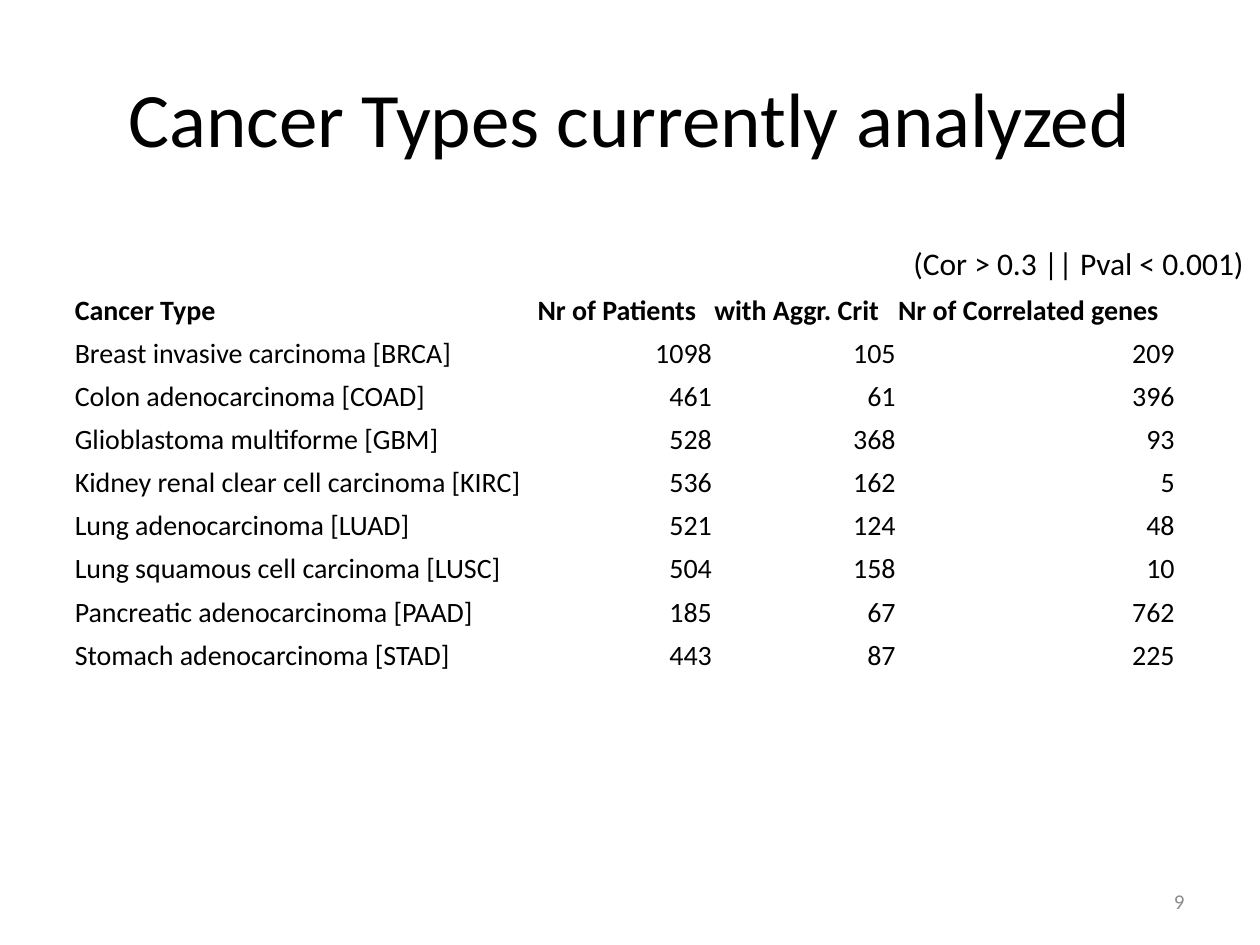
"""Build a slide with a table of the cancer types currently analyzed."""
import dataclasses

import pptx
import pptx.dml.color
import pptx.enum.text
import pptx.util

Pt = pptx.util.Pt
Align = pptx.enum.text.PP_ALIGN
Anchor = pptx.enum.text.MSO_ANCHOR


@dataclasses.dataclass(frozen=True)
class Theme:
    font: str = "Calibri"
    ink: str = "000000"
    muted: str = "8C8C8C"
    title: int = 44
    criterion: int = 18
    body: int = 16
    page_number: int = 12


THEME = Theme()
HEADINGS = ("Cancer Type", "Nr of Patients", "with Aggr. Crit", "Nr of Correlated genes")
CANCERS = (
    ("Breast invasive carcinoma [BRCA]", 1098, 105, 209),
    ("Colon adenocarcinoma [COAD]", 461, 61, 396),
    ("Glioblastoma multiforme [GBM]", 528, 368, 93),
    ("Kidney renal clear cell carcinoma [KIRC]", 536, 162, 5),
    ("Lung adenocarcinoma [LUAD]", 521, 124, 48),
    ("Lung squamous cell carcinoma [LUSC]", 504, 158, 10),
    ("Pancreatic adenocarcinoma [PAAD]", 185, 67, 762),
    ("Stomach adenocarcinoma [STAD]", 443, 87, 225),
)
COLUMN_WIDTHS = (264.5, 101, 105, 159.5)
ROW_HEIGHT = 24.65


def write(frame, text, *, size, color=THEME.ink, bold=False, align=Align.LEFT):
    paragraph = frame.paragraphs[0]
    paragraph.alignment = align
    run = paragraph.add_run()
    run.text = text
    run.font.name = THEME.font
    run.font.size = Pt(size)
    run.font.bold = bold
    run.font.color.rgb = pptx.dml.color.RGBColor.from_string(color)


def add_label(slide, box, text, *, anchor=Anchor.MIDDLE, wrap=True, **style):
    frame = slide.shapes.add_textbox(*map(Pt, box)).text_frame
    frame.word_wrap = wrap
    frame.vertical_anchor = anchor
    write(frame, text, **style)


def fill_cell(cell, text, **style):
    cell.fill.background()
    cell.vertical_anchor = Anchor.BOTTOM
    cell.margin_left = cell.margin_right = cell.margin_top = Pt(0.75)
    cell.margin_bottom = Pt(0)
    write(cell.text_frame, text, size=THEME.body, **style)


def add_cancer_table(slide, left, top):
    records = (HEADINGS, *CANCERS)
    width, height = sum(COLUMN_WIDTHS), ROW_HEIGHT * len(records)
    table = slide.shapes.add_table(
        len(records), len(HEADINGS), Pt(left), Pt(top), Pt(width), Pt(height)
    ).table
    table.first_row = table.horz_banding = False
    for column, column_width in zip(table.columns, COLUMN_WIDTHS):
        column.width = Pt(column_width)
    for row, record in zip(table.rows, records):
        row.height = Pt(ROW_HEIGHT)
        for cell, entry in zip(row.cells, record):
            align = Align.RIGHT if isinstance(entry, int) else Align.LEFT
            fill_cell(cell, str(entry), bold=record is HEADINGS, align=align)


def main():
    deck = pptx.Presentation()
    deck.slide_width, deck.slide_height = Pt(720), Pt(540)
    slide = deck.slides.add_slide(deck.slide_layouts[6])
    add_label(slide, (36, 21.6, 648, 90), "Cancer Types currently analyzed",
              size=THEME.title, align=Align.CENTER)
    add_cancer_table(slide, 42, 162.7)
    add_label(slide, (514.8, 136.1, 206, 29), "(Cor > 0.3 || Pval < 0.001)",
              size=THEME.criterion, anchor=Anchor.TOP, wrap=False)
    add_label(slide, (516, 500.5, 168, 28.75), "9",
              size=THEME.page_number, color=THEME.muted, align=Align.RIGHT)
    deck.save("out.pptx")


if __name__ == "__main__":
    main()
